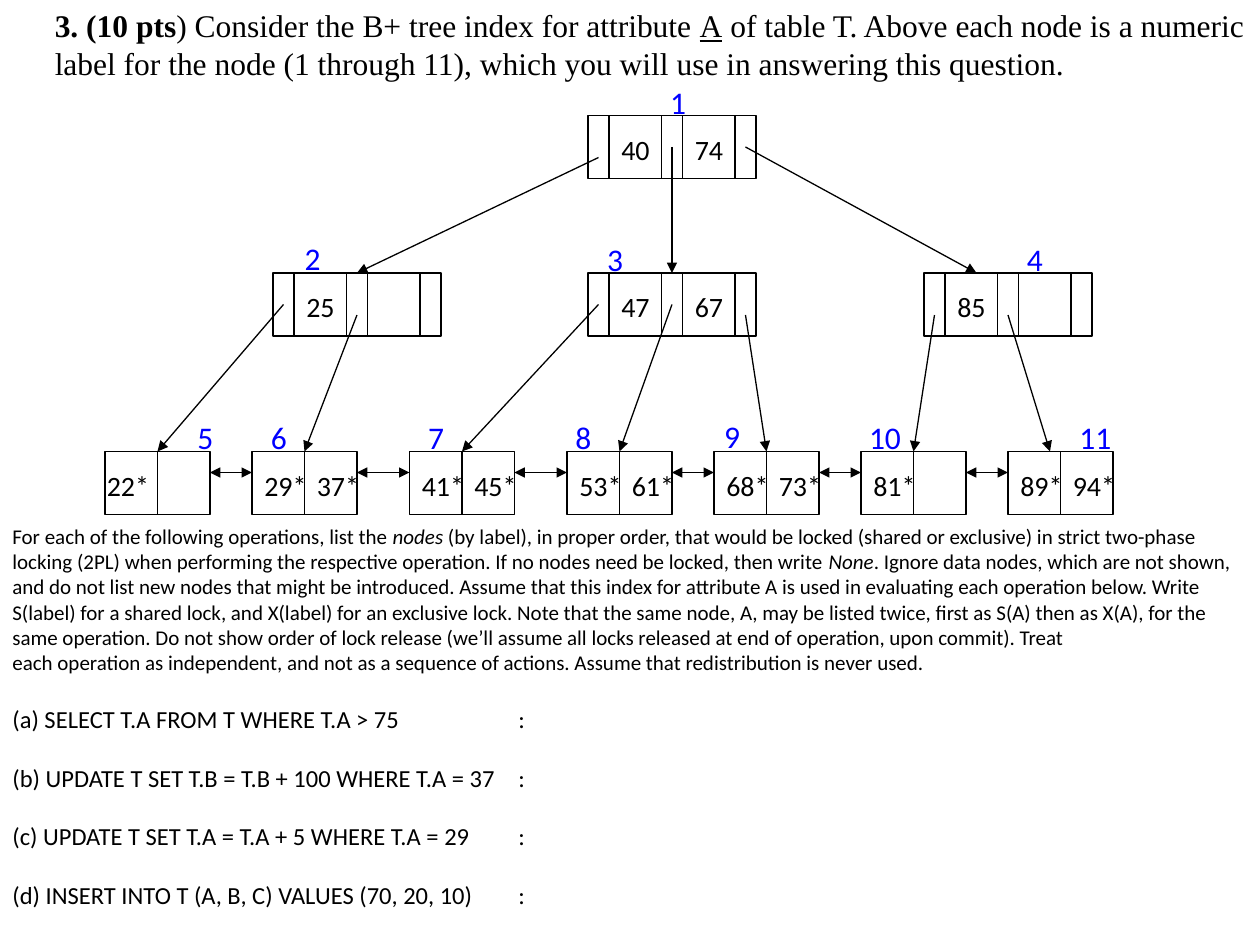
"""Build the B+ tree locking question slide."""
import pptx
import pptx.dml.color
import pptx.enum.shapes
import pptx.enum.text
import pptx.oxml.ns
import pptx.util
from pptx.util import Cm

BLACK = pptx.dml.color.RGBColor(0, 0, 0)
BLUE = pptx.dml.color.RGBColor(0, 0, 255)
GRID = 2.54 / 12
ROOT_Y, INNER_Y, LEAF_Y, NODE_H = 11, 26, 43, 6
INNER_W, LEAF_W = 16, 10

prs = pptx.Presentation()
prs.slide_width, prs.slide_height = Cm(25.4), Cm(19.05)
s = prs.slides.add_slide(prs.slide_layouts[5])


def add_line(x1, y1, x2, y2, ends=()):
    cxn = s.shapes.add_connector(
        pptx.enum.shapes.MSO_CONNECTOR.STRAIGHT,
        *(Cm(v * GRID) for v in (x1, y1, x2, y2)))
    cxn.line.color.rgb = BLACK
    cxn.line.width = pptx.util.Pt(0.75)
    sp_pr = cxn._element.spPr
    ln = sp_pr.find(pptx.oxml.ns.qn("a:ln"))
    for end in ends:
        ln.append(ln.makeelement(pptx.oxml.ns.qn(f"a:{end}"), {"type": "triangle"}))
    sp_pr.append(sp_pr.makeelement(pptx.oxml.ns.qn("a:effectLst"), {}))


def add_label(text, x, y, w, h, size, color):
    sp = s.shapes.add_textbox(Cm(x), Cm(y), Cm(w), Cm(h))
    tf = sp.text_frame
    tf.word_wrap = False
    tf.auto_size = pptx.enum.text.MSO_AUTO_SIZE.NONE
    r = tf.paragraphs[0].add_run()
    r.text = text
    r.font.name, r.font.size = "Calibri", pptx.util.Pt(size)
    r.font.color.rgb = color


sp = s.shapes.title
sp.left, sp.top, sp.width, sp.height = Cm(0.85), Cm(0), Cm(24.55), Cm(1.8)
tf = sp.text_frame
tf.word_wrap = True
tf.auto_size = pptx.enum.text.MSO_AUTO_SIZE.NONE
tf.vertical_anchor = pptx.enum.text.MSO_ANCHOR.TOP
tf.margin_right = Cm(0)
heading = [
    [("3. (10 pts", True, False),
     (") Consider the B+ tree index for attribute ", False, False),
     ("A", False, True),
     (" of table T. Above each node is a numeric", False, False)],
    [("label for the node (1 through 11), which you will use in answering "
      "this question.", False, False)],
]
for i, runs in enumerate(heading):
    p = tf.add_paragraph() if i else tf.paragraphs[0]
    p.alignment = pptx.enum.text.PP_ALIGN.LEFT
    for text, bold, underline in runs:
        r = p.add_run()
        r.text = text
        r.font.name, r.font.size = "Times New Roman", pptx.util.Pt(18)
        r.font.bold, r.font.underline = bold, underline
        r.font.color.rgb = BLACK

inner_nodes = [(56, ROOT_Y, ("40", "74")), (26, INNER_Y, ("25",)),
               (56, INNER_Y, ("47", "67")), (88, INNER_Y, ("85",))]
leaves = [(10, ("22*",)), (24, ("29*", "37*")), (39, ("41*", "45*")),
          (54, ("53*", "61*")), (68, ("68*", "73*")), (82, ("81*",)),
          (96, ("89*", "94*"))]
nodes = [(x, y, INNER_W, (2, 7, 9, 14), (2, 9), 1.07, keys)
         for x, y, keys in inner_nodes]
nodes += [(x, LEAF_Y, LEAF_W, (5,), (0 if x > 10 else -1, 5), 1.5, keys)
          for x, keys in leaves]

for x, y, w, splits, key_offsets, key_w, keys in nodes:
    sp = s.shapes.add_shape(pptx.enum.shapes.MSO_SHAPE.RECTANGLE,
                            *(Cm(v * GRID) for v in (x, y, w, NODE_H)))
    sp.shadow.inherit = False
    sp.fill.background()
    sp.line.color.rgb = BLACK
    sp.line.width = pptx.util.Pt(0.75)
    for split in splits:
        add_line(x + split, y, x + split, y + NODE_H)
    for key, offset in zip(keys, key_offsets):
        add_label(key, (x + offset) * GRID, (y + 1) * GRID, key_w, 0.94, 16, BLACK)

pointers = [(57, 15, 34, INNER_Y), (64, 14, 64, INNER_Y), (71, 14, 93, INNER_Y),
            (27, 29, 15, LEAF_Y), (34, 30, 29, LEAF_Y), (57, 29, 44, LEAF_Y),
            (64, 29, 59, LEAF_Y), (71, 30, 73, LEAF_Y), (89, 30, 87, LEAF_Y),
            (96, 30, 100, LEAF_Y)]
for pointer in pointers:
    add_line(*pointer, ends=("tailEnd",))
for (x, _), (next_x, _) in zip(leaves, leaves[1:]):
    add_line(x + LEAF_W, LEAF_Y + 2, next_x, LEAF_Y + 2, ends=("headEnd", "tailEnd"))

node_labels = [(13.26, 1.55), (5.89, 4.7), (11.99, 4.72), (20.45, 4.72),
               (3.73, 8.31), (5.21, 8.31), (8.38, 8.31), (11.35, 8.31),
               (14.35, 8.28), (17.27, 8.31), (21.51, 8.31)]
for number, (x, y) in enumerate(node_labels, 1):
    add_label(str(number), x, y, 0.84 if number < 10 else 1.17, 1.02, 18, BLUE)

instructions = [
    [("For each of the following operations, list the ", False),
     ("nodes ", True),
     ("(by label), in proper order, that would be locked (shared or exclusive) "
      "in strict two-phase locking (2PL) when performing the respective "
      "operation. If no nodes need be locked, then write ", False),
     ("None", True),
     (". Ignore data nodes, which are not shown, and do not list new nodes that "
      "might be introduced. Assume that this index for attribute A is used in "
      "evaluating each operation below. Write S(label) for a shared lock, and "
      "X(label) for an exclusive lock. Note that the same node, A, may be listed "
      "twice, first as S(A) then as X(A), for the same operation. Do not show "
      "order of lock release (we’ll assume all locks released at end of "
      "operation, upon commit). Treat", False)],
    [("each operation as independent, and not as a sequence of actions. Assume "
      "that redistribution is never used.", False)],
]
operations = ["(a) SELECT T.A FROM T WHERE T.A > 75",
              "(b) UPDATE T SET T.B = T.B + 100 WHERE T.A = 37",
              "(c) UPDATE T SET T.A = T.A + 5 WHERE T.A = 29",
              "(d) INSERT INTO T (A, B, C) VALUES (70, 20, 10)"]
paragraphs = [(runs, 12, 0) for runs in instructions]
paragraphs += [([(text + "\t:", False)], 14, 16.7) for text in operations]

sp = s.shapes.add_textbox(Cm(0), Cm(10.43), Cm(25.4), Cm(8.13))
tf = sp.text_frame
tf.word_wrap = True
for i, (runs, size, gap) in enumerate(paragraphs):
    p = tf.add_paragraph() if i else tf.paragraphs[0]
    p.space_before = pptx.util.Pt(gap)
    if gap:
        p_pr = p._p.get_or_add_pPr()
        tabs = p_pr.makeelement(pptx.oxml.ns.qn("a:tabLst"), {})
        tabs.append(tabs.makeelement(pptx.oxml.ns.qn("a:tab"),
                                     {"pos": str(Cm(10.2)), "algn": "l"}))
        p_pr.append(tabs)
    for text, italic in runs:
        r = p.add_run()
        r.text = text
        r.font.name, r.font.size = "Calibri", pptx.util.Pt(size)
        r.font.italic = italic
        r.font.color.rgb = BLACK

prs.save("out.pptx")
